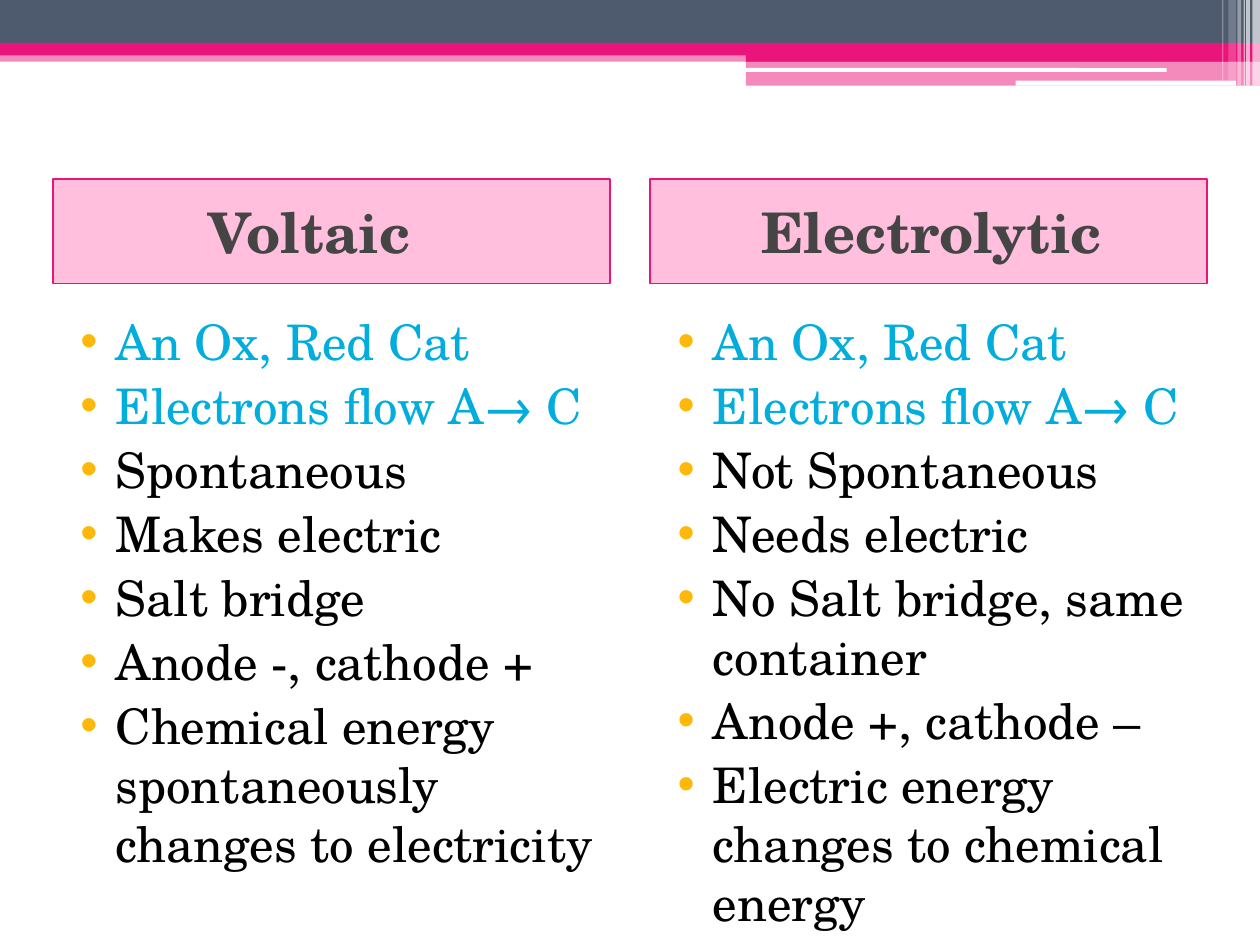
from lxml import etree
from pptx import Presentation
from pptx.dml.color import RGBColor
from pptx.enum.shapes import MSO_SHAPE
from pptx.enum.text import MSO_ANCHOR, PP_ALIGN
from pptx.oxml.ns import qn
from pptx.util import Inches, Pt

RECT, ROUNDED = MSO_SHAPE.RECTANGLE, MSO_SHAPE.ROUNDED_RECTANGLE
MIDDLE, CENTER, LEFT = MSO_ANCHOR.MIDDLE, PP_ALIGN.CENTER, PP_ALIGN.LEFT

WHITE = RGBColor(0xFF, 0xFF, 0xFF)
BLACK = RGBColor(0x00, 0x00, 0x00)
SLATE = RGBColor(0x4E, 0x5B, 0x6F)
PINK = RGBColor(0xEA, 0x15, 0x7A)
HOT_PINK = RGBColor(0xFF, 0x00, 0x79)
GRAY = RGBColor(0x45, 0x45, 0x45)
CYAN = RGBColor(0x00, 0xAD, 0xDC)
FONT = "TeX Gyre Schola"
BULLET_COLOR = "FEB80A"

prs = Presentation()
prs.slide_width, prs.slide_height = Inches(10), Inches(7.5)
slide = prs.slides.add_slide(prs.slide_layouts[6])


def add_box(left, top, width, height, color, opacity=100, kind=RECT):
    box = slide.shapes.add_shape(kind, Inches(left), Inches(top), Inches(width), Inches(height))
    box.shadow.inherit = False
    box.line.fill.background()
    box.fill.solid()
    box.fill.fore_color.rgb = color
    if opacity < 100:
        rgb = box.fill._xPr.find(qn("a:solidFill")).find(qn("a:srgbClr"))
        etree.SubElement(rgb, qn("a:alpha")).set("val", str(opacity * 1000))
    return box


def write(paragraph, text, size, color, bold=False, align=LEFT, margin=0.0, indent=0.0, bullet=None):
    paragraph.alignment = align
    paragraph.space_before = Pt(3)
    props = paragraph._p.get_or_add_pPr()
    props.set("marL", str(Inches(margin)))
    props.set("indent", str(Inches(indent)))
    if bullet:
        bullet_color = etree.SubElement(props, qn("a:buClr"))
        etree.SubElement(bullet_color, qn("a:srgbClr")).set("val", BULLET_COLOR)
        etree.SubElement(props, qn("a:buFont")).set("typeface", "Arial")
        etree.SubElement(props, qn("a:buChar")).set("char", bullet)
    run = paragraph.add_run()
    run.text = text
    run.font.name, run.font.size, run.font.bold = FONT, Pt(size), bold
    run.font.color.rgb = color


# Bands across the top
add_box(0, 0.4, 10, 0.09, PINK, 50)
add_box(0, 0, 10, 0.34, SLATE)
add_box(0, 0.34, 10, 0.1, PINK)
add_box(5.92, 0.39, 4.08, 0.1, PINK)
add_box(5.92, 0.48, 4.08, 0.2, PINK, 50)
add_box(5.91, 0.54, 3.35, 0.03, WHITE, kind=ROUNDED)
add_box(8.06, 0.64, 1.75, 0.04, WHITE, kind=ROUNDED)

# Translucent stripes in the corner: left, width, height, opacity
for left, width, height, opacity in [
    (9.94, 0.06, 0.68, 65), (9.89, 0.03, 0.68, 65), (9.87, 0.01, 0.68, 60),
    (9.82, 0.03, 0.68, 40), (9.75, 0.06, 0.64, 20), (9.7, 0.01, 0.64, 30),
]:
    add_box(left, 0, width, height, WHITE, opacity)

# Two columns comparing the cells
COLUMN_LEFT, COLUMN_WIDTH, COLUMN_PITCH = 0.42, 4.42, 4.74
SHARED = ["An Ox, Red Cat", "Electrons flow A→ C"]
cells = {
    "Voltaic": [
        "Spontaneous", "Makes electric", "Salt bridge", "Anode -, cathode +",
        "Chemical energy spontaneously changes to electricity",
    ],
    "Electrolytic": [
        "Not Spontaneous", "Needs electric", "No Salt bridge, same container",
        "Anode +, cathode –", "Electric energy changes to chemical energy",
    ],
}
for column, (cell, differences) in enumerate(cells.items()):
    left = COLUMN_LEFT + column * COLUMN_PITCH

    heading = add_box(left, 1.42, COLUMN_WIDTH, 0.83, HOT_PINK, 25)
    heading.line.color.rgb = PINK
    heading.line.width = Pt(1)
    heading.text_frame.vertical_anchor = MIDDLE
    title = heading.text_frame.paragraphs[0]
    write(title, cell, 32, GRAY, bold=True, align=CENTER, margin=0.05)
    if cell == "Voltaic":
        write(title, "\t", 19, GRAY, bold=True, align=CENTER, margin=0.05)

    facts = slide.shapes.add_textbox(
        Inches(left), Inches(2.42), Inches(COLUMN_WIDTH), Inches(4.8)).text_frame
    facts.word_wrap = True
    for row, fact in enumerate(SHARED + differences):
        paragraph = facts.add_paragraph() if row else facts.paragraphs[0]
        write(paragraph, fact, 28, CYAN if fact in SHARED else BLACK,
              margin=0.4, indent=-0.28, bullet="•")

prs.save("out.pptx")
